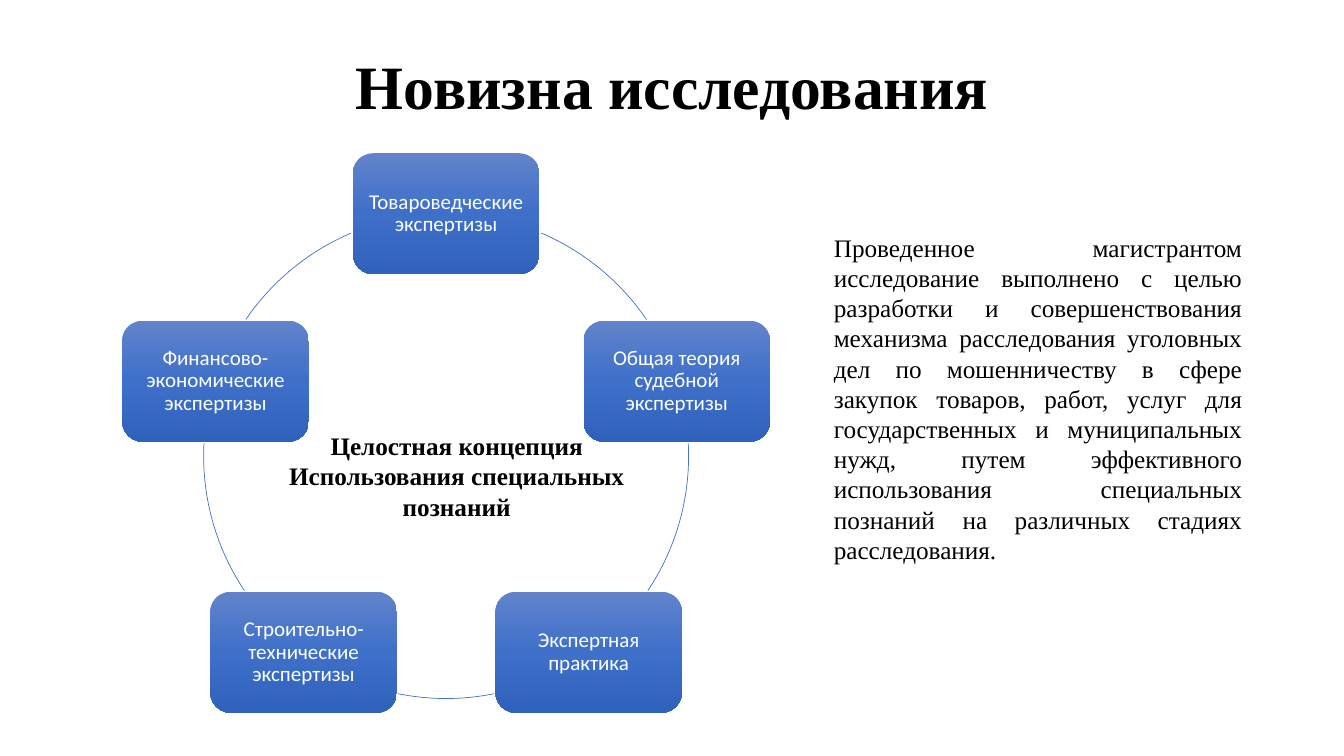
import copy
import math

from pptx import Presentation, util as u
from pptx.dml.color import RGBColor
from pptx.enum import shapes, text
from pptx.oxml import parse_xml
from pptx.oxml.ns import nsdecls, qn

COLORS = {"text": "000000", "box_text": "FFFFFF", "arc": "4472C4",
          "top": "6183CB", "middle": "3E70CA", "bottom": "3062BB"}
SERIF, SANS = "Times New Roman", "Calibri"

TITLE = "Новизна исследования"
TOPICS = ["Товароведческие экспертизы", "Общая теория судебной экспертизы",
          "Экспертная практика", "Строительно-технические экспертизы",
          "Финансово-экономические экспертизы"]
# Start and end of the arc after each topic, degrees clockwise from the right
ARCS = [(293.1, 325.7), (357, 33.7), (78.6, 101.4), (146.3, 183), (214.3, 246.9)]
CONCEPT = ["Целостная концепция", "Использования специальных", "познаний"]
PURPOSE = ("Проведенное магистрантом исследование выполнено с целью разработки и "
           "совершенствования механизма расследования уголовных дел по мошенничеству "
           "в сфере закупок товаров, работ, услуг для государственных и муниципальных "
           "нужд, путем эффективного использования специальных познаний на различных "
           "стадиях расследования.")


def rgb(name):
    return RGBColor.from_string(COLORS[name])


def inches(*lengths):
    return [u.Inches(length) for length in lengths]


def place(sp, box):
    sp.left, sp.top, sp.width, sp.height = inches(*box)


def write(tf, lines, size, font, color="text", bold=False,
          align=text.PP_ALIGN.CENTER, spacing=1.0):
    for i, line in enumerate(lines):
        p = tf.paragraphs[0] if i == 0 else tf.add_paragraph()
        p.alignment, p.line_spacing = align, spacing
        p.space_before = u.Pt(0)
        r = p.add_run()
        r.text = line
        r.font.size, r.font.name, r.font.bold = u.Pt(size), font, bold
        r.font.color.rgb = rgb(color)


def shade(sp):
    """Fill the shape with the three-stop vertical gradient."""
    sp.fill.gradient()
    sp.fill.gradient_angle = 270
    stop_list = sp._element.spPr.find(".//" + qn("a:gsLst"))
    stop_list.insert(1, copy.deepcopy(stop_list[0]))
    for i, (stop, name) in enumerate(zip(sp.fill.gradient_stops,
                                         ("top", "middle", "bottom"))):
        stop.position = i / 2
        stop.color.rgb = rgb(name)


def add_title(s, box):
    sp = s.shapes.title
    place(sp, box)
    sp.text_frame.vertical_anchor = text.MSO_ANCHOR.MIDDLE
    write(sp.text_frame, [TITLE], 44, SERIF, bold=True, spacing=0.9)


def add_topic(s, box, topic):
    sp = s.shapes.add_shape(shapes.MSO_SHAPE.ROUNDED_RECTANGLE, *inches(*box))
    sp.shadow.inherit = False
    shade(sp)
    sp.line.fill.background()
    tf = sp.text_frame
    tf.word_wrap = True
    tf.vertical_anchor = text.MSO_ANCHOR.MIDDLE
    tf.margin_left = tf.margin_right = tf.margin_top = tf.margin_bottom = u.Inches(0.06)
    write(tf, [topic], 15, SANS, "box_text", spacing=0.9)


def add_arc(s, box, angles):
    sp = s.shapes.add_shape(shapes.MSO_SHAPE.ARC, *inches(*box))
    sp.shadow.inherit = False
    sp.fill.background()
    sp.line.color.rgb = rgb("arc")
    sp.line.width = u.Pt(0.5)
    for i, angle in enumerate(angles):
        sp.adjustments[i] = angle * 0.6  # one degree is 60000 units


def add_cycle(s, box):
    """Topics evenly spaced on the circle that fills the box, joined by arcs."""
    left, top, size, _ = box
    radius = size / 2
    width, height = 1.85, 1.2
    for i, (topic, angles) in enumerate(zip(TOPICS, ARCS)):
        turn = 2 * math.pi * i / len(TOPICS)
        x = left + radius * (1 + math.sin(turn))
        y = top + radius * (1 - math.cos(turn))
        add_topic(s, (x - width / 2, y - height / 2, width, height), topic)
        add_arc(s, box, angles)


def add_concept(s, box):
    sp = s.shapes.add_textbox(*inches(*box))
    sp.text_frame.word_wrap = False
    write(sp.text_frame, CONCEPT, 18, SERIF, bold=True)


def add_purpose(s, box):
    sp = s.placeholders[1]
    place(sp, box)
    tf = sp.text_frame
    tf.auto_size = text.MSO_AUTO_SIZE.NONE
    tf.vertical_anchor = text.MSO_ANCHOR.TOP
    write(tf, [PURPOSE], 18, SERIF, align=text.PP_ALIGN.JUSTIFY)
    pPr = tf.paragraphs[0]._p.get_or_add_pPr()
    pPr.set("marL", "0")
    pPr.set("indent", "0")
    pPr.append(parse_xml(f"<a:buNone {nsdecls('a')}/>"))


def main():
    prs = Presentation()
    prs.slide_width, prs.slide_height = inches(13.33, 7.5)
    s = prs.slides.add_slide(prs.slide_layouts[1])
    add_title(s, (0.92, 0.16, 11.5, 1.45))
    add_cycle(s, (2.02, 2.12, 4.81, 4.81))
    add_concept(s, (2.75, 4.22, 3.56, 1.01))
    add_purpose(s, (8.17, 2.25, 4.25, 3.43))
    prs.save("out.pptx")


if __name__ == "__main__":
    main()
